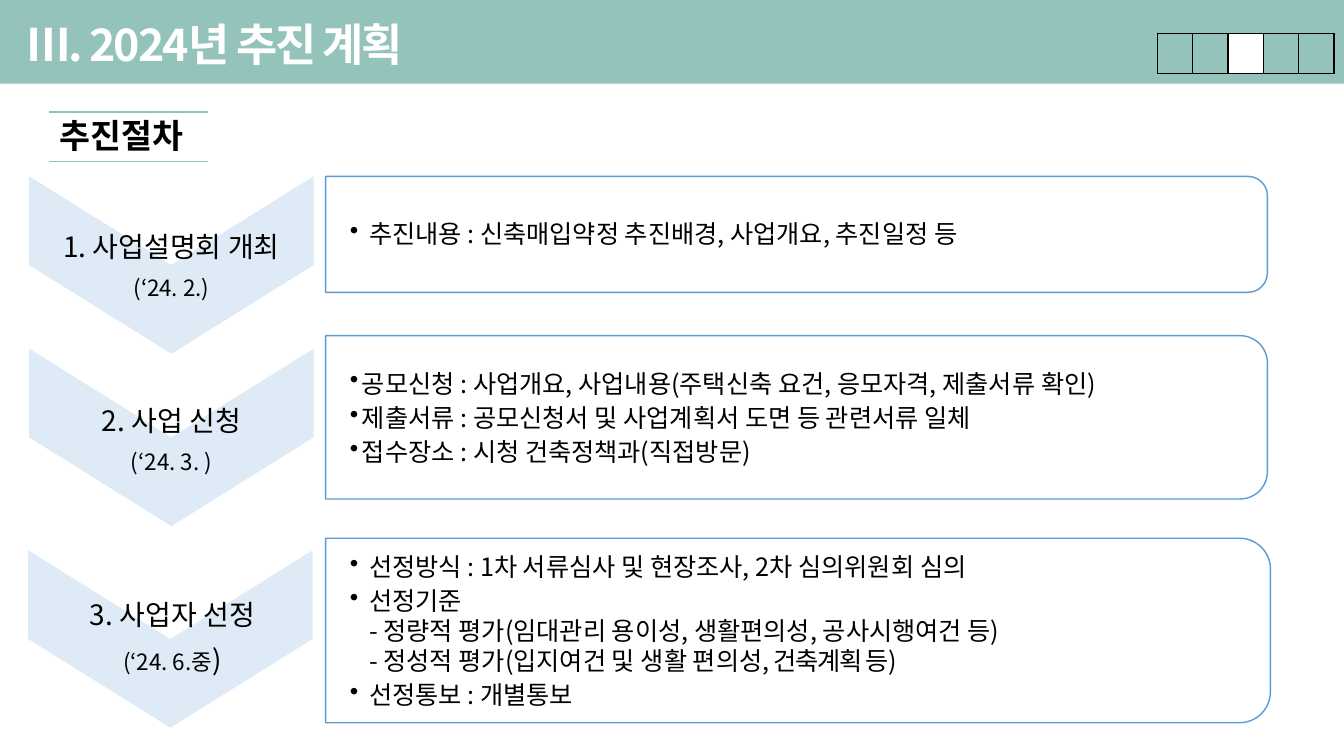
from dataclasses import dataclass

from lxml import etree
from pptx import Presentation
from pptx.dml import color as dml
from pptx.enum import shapes, text
from pptx.oxml import ns
from pptx.util import Inches, Pt

FONT = "Noto Sans CJK KR"
COLORS = {
    "teal": "94C3BB",
    "white": "FFFFFF",
    "black": "000000",
    "pale_blue": "DEEBF7",
    "blue": "5B9BD5",
}
LINE_HEIGHT = 1.19
CARD_LEFT = 3.23
CHEVRON_WIDTH, CHEVRON_HEIGHT = 2.82, 1.76


@dataclass(frozen=True)
class Box:
    left: float
    top: float
    width: float
    height: float

    def lengths(self) -> list[int]:
        return [Inches(v) for v in (self.left, self.top, self.width, self.height)]

    def turned(self) -> "Box":
        shift = (self.width - self.height) / 2
        return Box(self.left + shift, self.top - shift, self.height, self.width)


@dataclass(frozen=True)
class Line:
    text: str
    tail: str = ""


@dataclass(frozen=True)
class Step:
    title: str
    date: Line
    chevron_left: float
    chevron_top: float
    label: Box
    card: Box
    detail: Box
    indent: float
    details: tuple[Line, ...]


STEPS = (
    Step("1. 사업설명회 개최", Line("(‘24. 2.)"), 0.29, 1.75,
         Box(0.29, 1.75, 2.82, 1.76), Box(CARD_LEFT, 1.75, 9.34, 1.15),
         Box(3.35, 1.8, 9.29, 1.04), 0.19,
         (Line("추진내용 : 신축매입약정 추진배경, 사업개요, 추진일정 등"),)),
    Step("2. 사업 신청", Line("(‘24. 3. )"), 0.29, 3.46,
         Box(0.29, 3.48, 2.82, 1.76), Box(CARD_LEFT, 3.33, 9.34, 1.62),
         Box(3.35, 3.41, 9.26, 1.46), 0.12,
         (Line("공모신청 : 사업개요, 사업내용(주택신축 요건, 응모자격, 제출서류 확인)"),
          Line("제출서류 : 공모신청서 및 사업계획서 도면 등 관련서류 일체"),
          Line("접수장소 : 시청 건축정책과(직접방문)"))),
    Step("3. 사업자 선정", Line("(‘24. 6.중", ")"), 0.28, 5.46,
         Box(0.3, 5.44, 2.82, 1.76), Box(CARD_LEFT, 5.34, 9.37, 1.83),
         Box(3.35, 5.43, 9.28, 1.65), 0.19,
         (Line("선정방식 : 1차 서류심사 및 현장조사, 2차 심의위원회 심의"),
          Line("선정기준\v- 정량적 평가(임대관리 용이성, 생활편의성, 공사시행여건 등)"
               "\v- 정성적 평가(입지여건 및 생활 편의성", ", 건축계획 등)"),
          Line("선정통보 : 개별통보"))),
)


def rgb(name: str) -> dml.RGBColor:
    return dml.RGBColor.from_string(COLORS[name])


def style_run(run, size: float, color: str = "black", bold: bool = False,
              spacing: float = 0) -> None:
    run.font.size = Pt(size)
    run.font.name = FONT
    run.font.bold = bold
    run.font.color.rgb = rgb(color)
    properties = run.font._element
    etree.SubElement(properties, ns.qn("a:ea")).set("typeface", FONT)
    if spacing:
        properties.set("spc", str(round(spacing * 100)))


def add_heading(slide, box: Box, content: str, size: float, color: str,
                spacing: float = 0) -> None:
    frame = slide.shapes.add_textbox(*box.lengths()).text_frame
    frame.word_wrap = True
    frame.text = content
    style_run(frame.paragraphs[0].runs[0], size, color, True, spacing)


def add_block(slide, box: Box, left_inset: float):
    frame = slide.shapes.add_textbox(*box.lengths()).text_frame
    frame.word_wrap = True
    frame.vertical_anchor = text.MSO_ANCHOR.MIDDLE
    frame.margin_left = Inches(left_inset)
    frame.margin_top = frame.margin_right = frame.margin_bottom = Inches(0.01)
    return frame


def write_line(paragraph, line: Line, size: float, tail_size: float,
               gap: float, tail_spacing: float = 0) -> None:
    paragraph.text = line.text
    for run in paragraph.runs:
        style_run(run, size)
    if line.tail:
        tail = paragraph.add_run()
        tail.text = line.tail
        style_run(tail, tail_size, spacing=tail_spacing)
    largest = tail_size if line.tail else size
    paragraph.line_spacing = Pt(largest * LINE_HEIGHT)
    paragraph.space_after = Pt(gap)


def add_shape(slide, kind, box: Box, fill: str, outline: str = "",
              rotation: float = 0):
    shape = slide.shapes.add_shape(kind, *box.lengths())
    shape.rotation = rotation
    shape.shadow.inherit = False
    shape.fill.solid()
    shape.fill.fore_color.rgb = rgb(fill)
    if outline:
        shape.line.color.rgb = rgb(outline)
        shape.line.width = Pt(1)
    else:
        shape.line.fill.background()
    return shape


def add_step(slide, step: Step) -> None:
    chevron = Box(step.chevron_left, step.chevron_top, CHEVRON_WIDTH, CHEVRON_HEIGHT)
    add_shape(slide, shapes.MSO_SHAPE.CHEVRON, chevron.turned(), "pale_blue", rotation=90)
    label = add_block(slide, step.label, 0.01)
    for line, size in ((Line(step.title), 20), (step.date, 16)):
        paragraph = label.paragraphs[0] if size == 20 else label.add_paragraph()
        write_line(paragraph, line, size, 20, 8)
        paragraph.alignment = text.PP_ALIGN.CENTER

    add_shape(slide, shapes.MSO_SHAPE.ROUND_2_SAME_RECTANGLE, step.card.turned(),
              "white", "blue", 90)
    detail = add_block(slide, step.detail, 0.12)
    for index, line in enumerate(step.details):
        paragraph = detail.add_paragraph() if index else detail.paragraphs[0]
        write_line(paragraph, line, 18, 18, 3, -1)
        properties = paragraph._p.get_or_add_pPr()
        properties.set("marL", str(Inches(step.indent)))
        properties.set("indent", str(-Inches(step.indent)))
        etree.SubElement(properties, ns.qn("a:buChar")).set("char", "•")


def add_rule(slide, top: float) -> None:
    rule = slide.shapes.add_connector(
        shapes.MSO_CONNECTOR.STRAIGHT,
        Inches(0.49), Inches(top), Inches(2.06), Inches(top))
    rule.line.color.rgb = rgb("teal")
    rule.line.width = Pt(1)
    etree.SubElement(rule._element.spPr, ns.qn("a:effectLst"))


def add_progress(slide, count: int, current: int) -> None:
    box = Box(11.48, 0.33, count * 0.35, 0.4)
    table = slide.shapes.add_table(1, count, *box.lengths()).table
    table.first_row = table.horz_banding = False
    for index, cell in enumerate(table.iter_cells()):
        cell.margin_top = cell.margin_bottom = 0
        properties = cell._tc.get_or_add_tcPr()
        for side in ("lnL", "lnR", "lnT", "lnB"):
            border = etree.SubElement(properties, ns.qn(f"a:{side}"), w=str(Pt(1)))
            solid = etree.SubElement(border, ns.qn("a:solidFill"))
            etree.SubElement(solid, ns.qn("a:srgbClr"), val=COLORS["black"])
        if index == current:
            cell.fill.solid()
            cell.fill.fore_color.rgb = rgb("white")
        else:
            cell.fill.background()


def main() -> None:
    presentation = Presentation()
    presentation.slide_width = Inches(13.33)
    presentation.slide_height = Inches(7.5)
    slide = presentation.slides.add_slide(presentation.slide_layouts[6])
    slide.background.fill.solid()
    slide.background.fill.fore_color.rgb = rgb("teal")
    add_shape(slide, shapes.MSO_SHAPE.RECTANGLE, Box(0, 0.83, 13.33, 6.67), "white")
    add_heading(slide, Box(0.16, 0.12, 10.09, 0.64), "Ⅲ. 2024년 추진 계획", 32, "white", -1.5)
    add_heading(slide, Box(0.49, 1.09, 4.46, 0.5), "추진절차", 24, "black")
    for top in (1.11, 1.6):
        add_rule(slide, top)
    for step in STEPS:
        add_step(slide, step)
    add_progress(slide, 5, 2)
    presentation.save("out.pptx")


if __name__ == "__main__":
    main()
